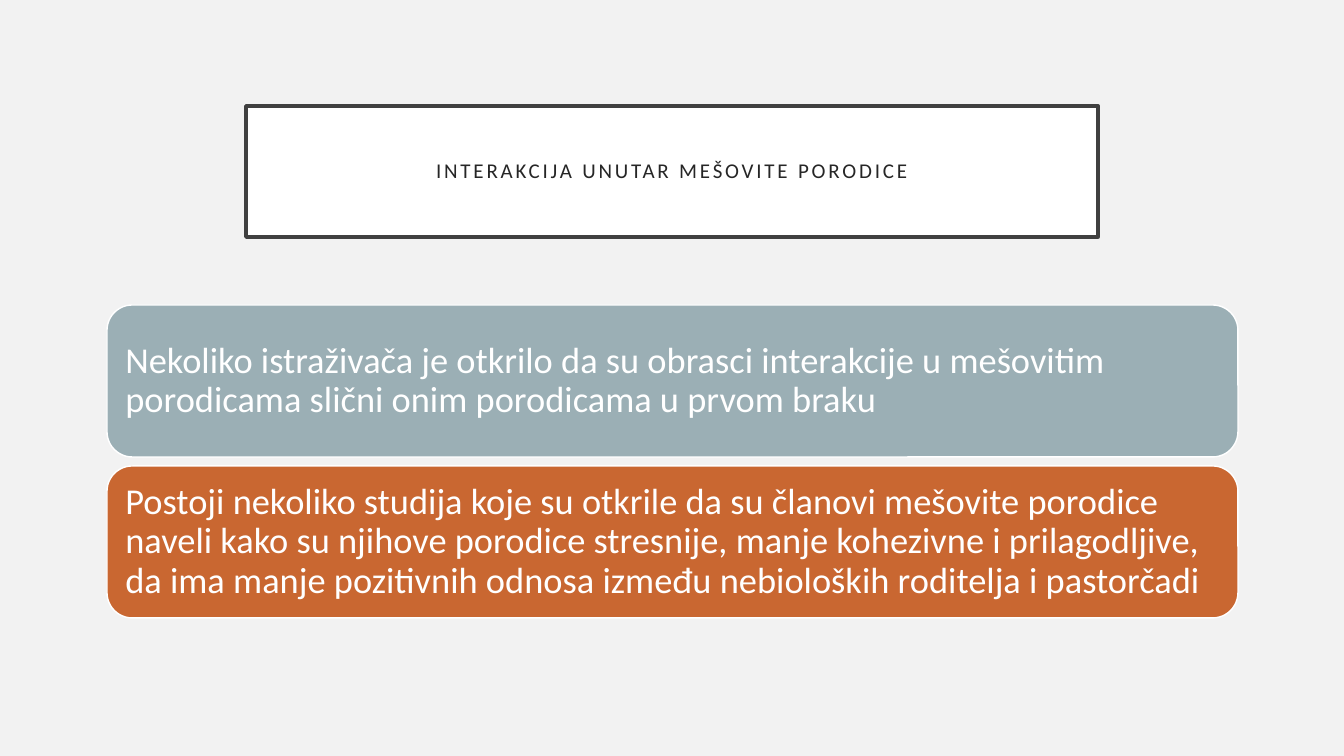
from dataclasses import dataclass

from pptx import Presentation
from pptx.dml.color import RGBColor
from pptx.enum.shapes import MSO_SHAPE
from pptx.enum.text import MSO_ANCHOR, PP_ALIGN
from pptx.slide import Slide
from pptx.util import Emu, Pt

EMU_PER_PX = 914400 / 100.8
COLORS = {
    "background": "F2F2F2",
    "white": "FFFFFF",
    "frame": "404040",
    "heading": "262626",
    "similar": "9BAFB5",
    "stressful": "C96731",
}
CARD_TOP, CARD_PITCH = 305, 161


@dataclass(frozen=True)
class Panel:
    text: str
    fill: str
    top: int
    left: int = 107
    width: int = 1131
    height: int = 152
    outline: str = "white"
    outline_pt: float = 1
    ink: str = "white"
    size_pt: int = 26
    inset: int = 11
    spacing: int = 0
    preset: MSO_SHAPE = MSO_SHAPE.ROUNDED_RECTANGLE
    align: PP_ALIGN = PP_ALIGN.LEFT


HEADING = Panel(
    "INTERAKCIJA UNUTAR MEŠOVITE PORODICE", "white", 106, 246, 852, 131,
    outline="frame", outline_pt=2.5, ink="heading", size_pt=15, inset=20,
    spacing=200, preset=MSO_SHAPE.RECTANGLE, align=PP_ALIGN.CENTER,
)
FINDINGS = [
    ("similar", "Nekoliko istraživača je otkrilo da su obrasci interakcije u "
     "mešovitim porodicama slični onim porodicama u prvom braku"),
    ("stressful", "Postoji nekoliko studija koje su otkrile da su članovi "
     "mešovite porodice naveli kako su njihove porodice stresnije, manje "
     "kohezivne i prilagodljive, da ima manje pozitivnih odnosa između "
     "nebioloških roditelja i pastorčadi"),
]


def px(length: int) -> Emu:
    return Emu(round(length * EMU_PER_PX))


def color(name: str) -> RGBColor:
    return RGBColor.from_string(COLORS[name])


def draw_panel(slide: Slide, panel: Panel) -> None:
    box = slide.shapes.add_shape(
        panel.preset, px(panel.left), px(panel.top), px(panel.width), px(panel.height)
    )
    box.shadow.inherit = False
    box.fill.solid()
    box.fill.fore_color.rgb = color(panel.fill)
    box.line.color.rgb = color(panel.outline)
    box.line.width = Pt(panel.outline_pt)

    frame = box.text_frame
    inset = px(panel.inset)
    frame_format = {
        "word_wrap": True,
        "vertical_anchor": MSO_ANCHOR.MIDDLE,
        "margin_left": inset,
        "margin_top": inset,
        "margin_right": inset,
        "margin_bottom": inset,
    }
    for name, value in frame_format.items():
        setattr(frame, name, value)

    paragraph = frame.paragraphs[0]
    paragraph.alignment = panel.align
    paragraph.line_spacing = 0.9
    run = paragraph.add_run()
    run.text = panel.text
    for name, value in {"name": "Calibri", "size": Pt(panel.size_pt)}.items():
        setattr(run.font, name, value)
    run.font.color.rgb = color(panel.ink)
    if panel.spacing:
        run._r.get_or_add_rPr().set("spc", str(panel.spacing))


def main() -> None:
    deck = Presentation()
    deck.slide_width, deck.slide_height = px(1344), px(756)
    slide = deck.slides.add_slide(deck.slide_layouts[6])
    slide.background.fill.solid()
    slide.background.fill.fore_color.rgb = color("background")
    draw_panel(slide, HEADING)
    for row, (fill, finding) in enumerate(FINDINGS):
        draw_panel(slide, Panel(finding, fill, CARD_TOP + row * CARD_PITCH))
    deck.save("out.pptx")


if __name__ == "__main__":
    main()
